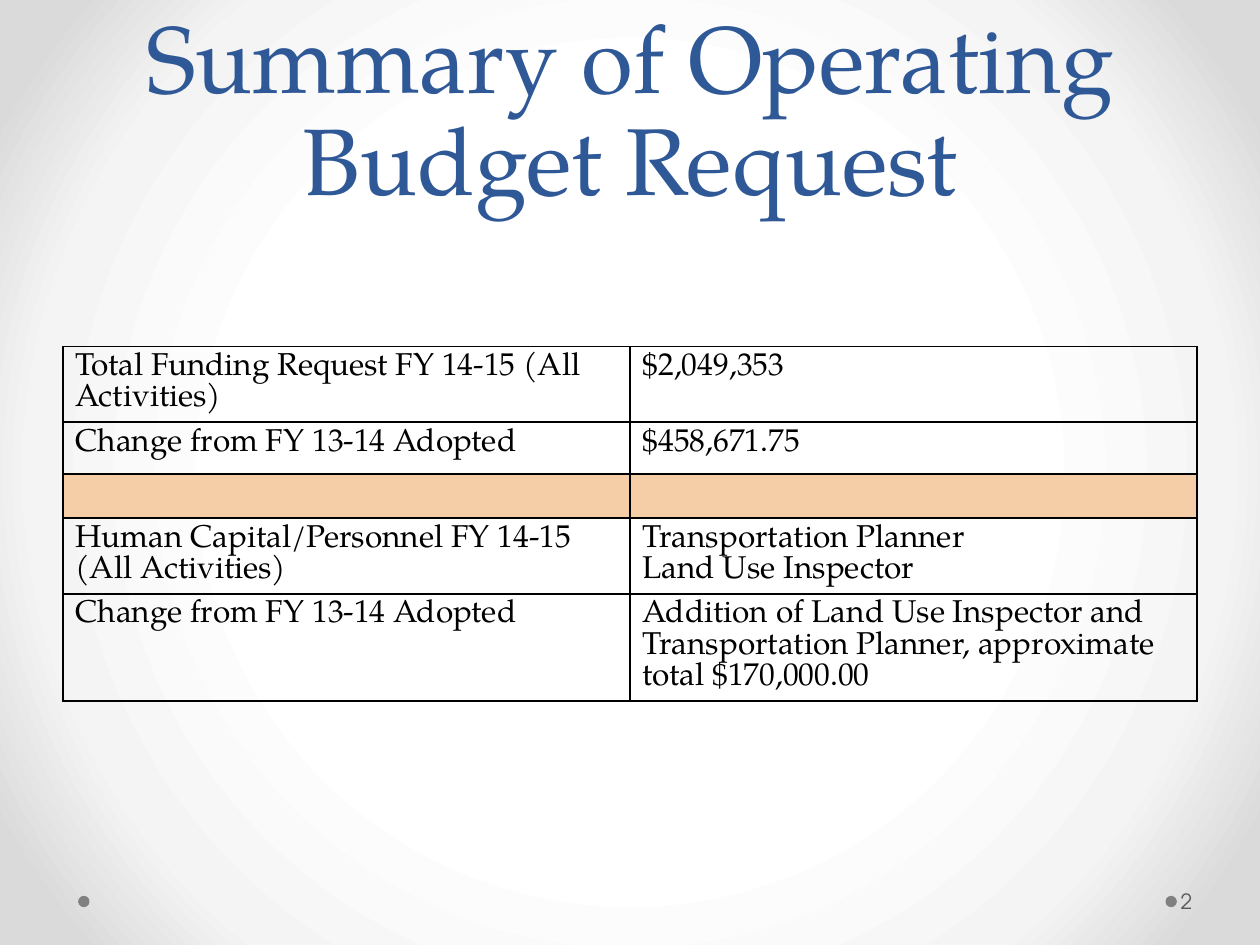
from lxml import etree
from pptx import Presentation
from pptx.dml.color import RGBColor
from pptx.enum.shapes import MSO_SHAPE
from pptx.enum.text import MSO_ANCHOR, PP_ALIGN
from pptx.oxml import parse_xml
from pptx.oxml.ns import nsdecls
from pptx.util import Inches, Pt

OVAL = MSO_SHAPE.OVAL
BOTTOM, MIDDLE = MSO_ANCHOR.BOTTOM, MSO_ANCHOR.MIDDLE
CENTER = PP_ALIGN.CENTER

BLUE = RGBColor(0x2F, 0x58, 0x97)
BLACK = RGBColor(0, 0, 0)
PEACH = RGBColor(0xF5, 0xCE, 0xA7)
GRAY = RGBColor(0x80, 0x80, 0x80)
DARK_GRAY = RGBColor(0x59, 0x59, 0x59)
SERIF, SANS = "TeX Gyre Pagella", "TeX Gyre Adventor"


def set_font(paragraph, name, size, color):
    paragraph.font.name = name
    paragraph.font.size = Pt(size)
    paragraph.font.color.rgb = color


def add_borders(cell):
    properties = cell._tc.get_or_add_tcPr()
    for position, side in enumerate(("lnL", "lnR", "lnT", "lnB")):
        properties.insert(position, parse_xml(
            f'<a:{side} {nsdecls("a")} w="{Pt(1)}"><a:solidFill>'
            f'<a:srgbClr val="{BLACK}"/></a:solidFill></a:{side}>'))


prs = Presentation()
prs.slide_width, prs.slide_height = Inches(10), Inches(7.5)
slide = prs.slides.add_slide(prs.slide_layouts[5])

# Radial background
stops = "".join(
    f'<a:gs pos="{percent * 1000}"><a:srgbClr val="{color}"/></a:gs>'
    for percent, color in ((50, "FFFFFF"), (76, "F4F4F4"), (92, "DADADA")))
slide.element.cSld.insert(0, parse_xml(
    f'<p:bg {nsdecls("p", "a")}><p:bgPr><a:gradFill><a:gsLst>{stops}</a:gsLst>'
    '<a:path path="circle"><a:fillToRect l="50000" t="50000" r="50000" b="50000"/>'
    '</a:path></a:gradFill><a:effectLst/></p:bgPr></p:bg>'))

# Footer dots
for left in (9.25, 0.62):
    dot = slide.shapes.add_shape(OVAL, Inches(left), Inches(7.11), Inches(0.09), Inches(0.09))
    dot.shadow.inherit = False
    dot.fill.solid()
    dot.fill.fore_color.rgb = GRAY
    dot.line.fill.background()

# Title
title = slide.shapes.title
title.left, title.top, title.width, title.height = Inches(0.5), 0, Inches(9), Inches(1.75)
title.text_frame.text = "Summary of Operating Budget Request"
title.text_frame.vertical_anchor = BOTTOM
heading = title.text_frame.paragraphs[0]
heading.alignment = CENTER
heading.line_spacing = Pt(58)
set_font(heading, SERIF, 54, BLUE)

# Budget table
rows = [
    (0.6, "Total Funding Request FY 14-15 (All Activities)", "$2,049,353"),
    (0.41, "Change from FY 13-14 Adopted", "$458,671.75"),
    (0.35, "", ""),
    (0.6, "Human Capital/Personnel FY 14-15 (All Activities)",
     "Transportation Planner\nLand Use Inspector"),
    (0.85, "Change from FY 13-14 Adopted",
     "Addition of Land Use Inspector and Transportation Planner, "
     "approximate total $170,000.00"),
]
budget = slide.shapes.add_table(len(rows), 2, Inches(0.5), Inches(2.75), Inches(9),
                                Inches(sum(row[0] for row in rows))).table
budget.first_row = budget.horz_banding = False
for row, (height, *entries) in zip(budget.rows, rows):
    row.height = Inches(height)
    for cell, entry in zip(row.cells, entries):
        cell.text = entry
        for paragraph in cell.text_frame.paragraphs:
            paragraph.line_spacing = Pt(18)
            set_font(paragraph, SERIF, 18, BLACK)
            if not entry:
                # An empty line takes its height from its end mark
                end_mark = etree.SubElement(
                    paragraph._p, "{http://schemas.openxmlformats.org/drawingml/2006/main}endParaRPr")
                end_mark.set("sz", "1800")
        if entry:
            cell.fill.background()
        else:
            cell.fill.solid()
            cell.fill.fore_color.rgb = PEACH
        add_borders(cell)

# Slide number
number = slide.shapes.add_textbox(Inches(9.34), Inches(6.95), Inches(0.61), Inches(0.4)).text_frame
number.word_wrap = True
number.vertical_anchor = MIDDLE
number.margin_left = Inches(0.03)
number.margin_right = number.margin_top = number.margin_bottom = Inches(0.05)
number.text = "2"
set_font(number.paragraphs[0], SANS, 12, DARK_GRAY)

prs.save("out.pptx")
